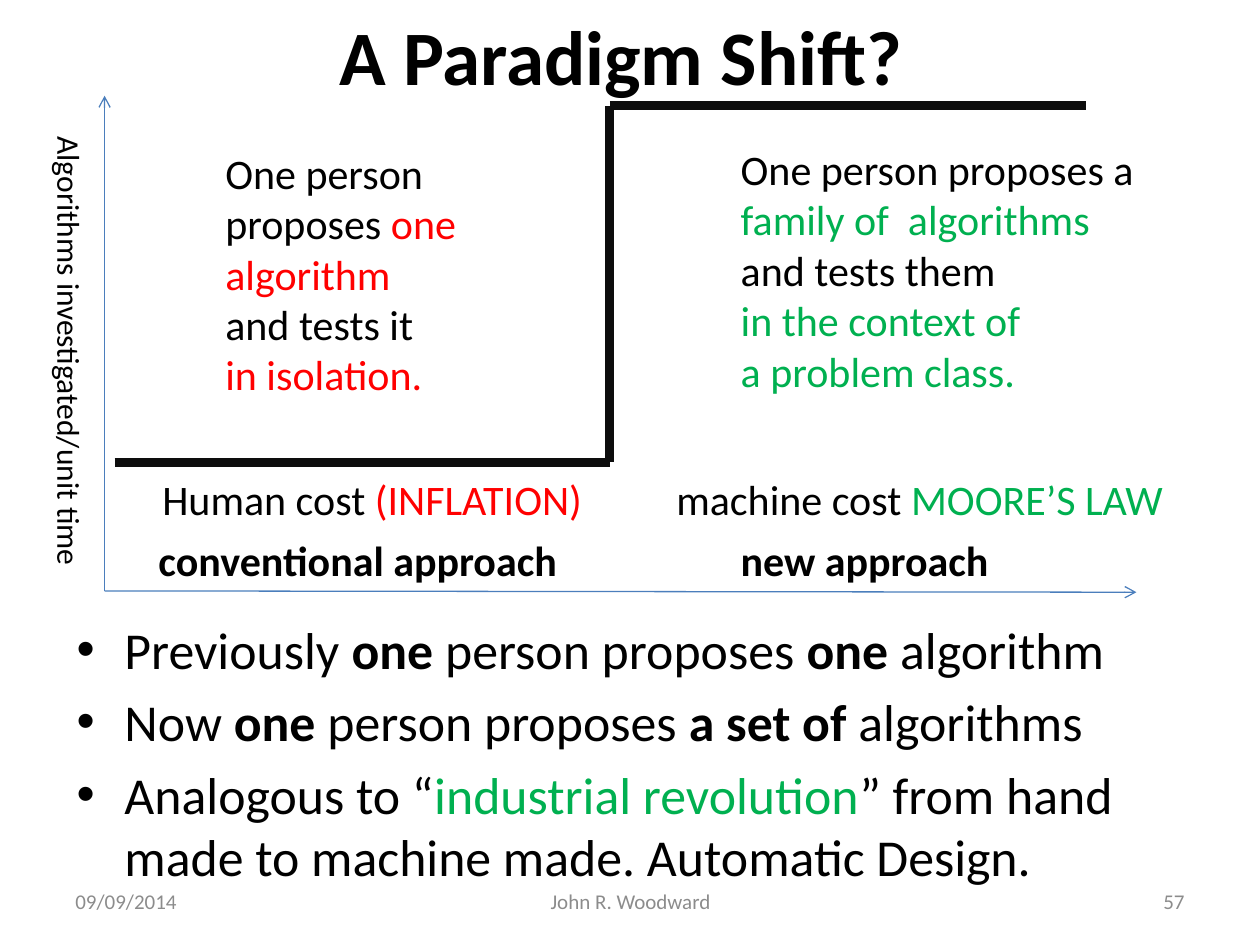
"""Build the slide that contrasts one algorithm with a family of algorithms."""
import pptx
import pptx.dml.color
import pptx.enum.shapes
import pptx.enum.text
import pptx.oxml
import pptx.oxml.ns
import pptx.util
from pptx.util import Inches

BLACK, RED, GREEN = "000000", "FF0000", "00B050"
GREY, BLUE, STEP = "8C8C8C", "4B7EBC", "0D0D0D"
ALIGN = pptx.enum.text.PP_ALIGN
ANCHOR = pptx.enum.text.MSO_ANCHOR


def colour(code):
    """Turn a hex string into a colour."""
    return pptx.dml.color.RGBColor.from_string(code)


def add_xml(parent, tag, **attributes):
    """Append a drawing element to its parent."""
    child = pptx.oxml.parse_xml(f"<a:{tag} {pptx.oxml.ns.nsdecls('a')}/>")
    for name, value in attributes.items():
        child.set(name, value)
    parent.append(child)


class Painter:
    """Hold the font and the current slide."""

    def __init__(self, page, font="Calibri"):
        """Keep the slide and the font."""
        self.page = page
        self.font = font

    def text(self, place, paragraphs, size, align=ALIGN.LEFT, anchor=ANCHOR.TOP,
             wrap=True, turn=0, bullet=False):
        """Add a text box whose spans are (text, colour, bold)."""
        box = self.page.shapes.add_textbox(*map(Inches, place))
        box.rotation = turn
        frame = box.text_frame
        frame.word_wrap = wrap
        frame.vertical_anchor = anchor
        for index, spans in enumerate(paragraphs):
            para = frame.add_paragraph() if index else frame.paragraphs[0]
            para.alignment = align
            if bullet:
                self.bullet(para)
            for words, shade, bold in spans:
                span = para.add_run()
                span.text = words
                span.font.name = self.font
                span.font.size = pptx.util.Pt(size)
                span.font.bold = bold
                span.font.color.rgb = colour(shade)

    def bullet(self, para):
        """Give a paragraph a hanging bullet and space above."""
        para.space_before = pptx.util.Pt(6)
        properties = para._p.get_or_add_pPr()
        properties.set("marL", str(Inches(0.38)))
        properties.set("indent", str(Inches(-0.38)))
        add_xml(properties, "buFont", typeface="Arial")
        add_xml(properties, "buChar", char="•")

    def line(self, start, end, shade, width, arrow=False):
        """Add a straight line, with an arrowhead at its end if asked."""
        line = self.page.shapes.add_connector(
            pptx.enum.shapes.MSO_CONNECTOR.STRAIGHT, *map(Inches, start + end))
        line.line.color.rgb = colour(shade)
        line.line.width = pptx.util.Pt(width)
        if arrow:
            add_xml(line.line._get_or_add_ln(), "tailEnd", type="arrow")
        add_xml(line._element.spPr, "effectLst")


def plain(words, shade=BLACK):
    """Return a regular span."""
    return words, shade, False


def strong(words):
    """Return a bold span."""
    return words, BLACK, True


def main():
    """Draw the slide and save it."""
    deck = pptx.Presentation()
    deck.slide_width, deck.slide_height = Inches(10), Inches(7.5)
    painter = Painter(deck.slides.add_slide(deck.slide_layouts[6]))

    painter.text((0.43, -0.19, 9, 1.25), [[strong("A Paradigm Shift?")]], 44,
                 ALIGN.CENTER, ANCHOR.MIDDLE)

    origin = (0.83, 4.69)
    for tip in ((9.02, 4.7), (0.83, 0.76)):
        painter.line(origin, tip, BLUE, 0.75, arrow=True)
    corners = [(0.91, 3.67), (4.84, 3.67), (4.84, 0.84), (8.62, 0.84)]
    for start, end in zip(corners, corners[1:]):
        painter.line(start, end, STEP, 5)

    painter.text((-1.27, 2.61, 3.65, 0.4), [[plain("Algorithms investigated/unit time")]],
                 18, wrap=False, turn=90)
    painter.text((1.69, 1.12, 2.13, 2.12), [
        [plain("One person")],
        [plain("proposes "), plain("one", RED)],
        [plain("algorithm", RED)],
        [plain("and tests it")],
        [plain("in isolation.", RED)],
    ], 24, wrap=False)
    painter.text((5.78, 1.09, 3.71, 2.12), [
        [plain("One person proposes a")],
        [plain("family of  algorithms", GREEN)],
        [plain("and tests them")],
        [plain("in the context of", GREEN)],
        [plain("a problem class.", GREEN)],
    ], 24)

    labels = [
        (1.19, 3.71, 3.8, [plain("Human cost "), plain("(INFLATION)", RED)]),
        (5.27, 3.71, 4.53, [plain("machine cost "), plain("MOORE’S LAW", GREEN)]),
        (1.16, 4.19, 3.8, [strong("conventional approach")]),
        (5.78, 4.19, 2.69, [strong("new approach")]),
    ]
    for left, top, width, spans in labels:
        painter.text((left, top, width, 0.5), [spans], 24)

    painter.text((0.51, 4.85, 9, 2.16), [
        [plain("Previously "), strong("one"), plain(" person proposes "),
         strong("one"), plain(" algorithm")],
        [plain("Now "), strong("one"), plain(" person proposes "),
         strong("a set of "), plain("algorithms")],
        [plain("Analogous to “"), plain("industrial revolution", GREEN),
         plain("” from hand made to machine made. Automatic Design.")],
    ], 29.6, bullet=True)

    footers = [
        (0.5, 2.33, "09/09/2014", ALIGN.LEFT),
        (3.42, 3.17, "John R. Woodward", ALIGN.CENTER),
        (7.17, 2.33, "57", ALIGN.RIGHT),
    ]
    for left, width, words, align in footers:
        painter.text((left, 6.95, width, 0.4), [[plain(words, GREY)]], 12,
                     align, ANCHOR.MIDDLE)

    deck.save("out.pptx")


if __name__ == "__main__":
    main()
